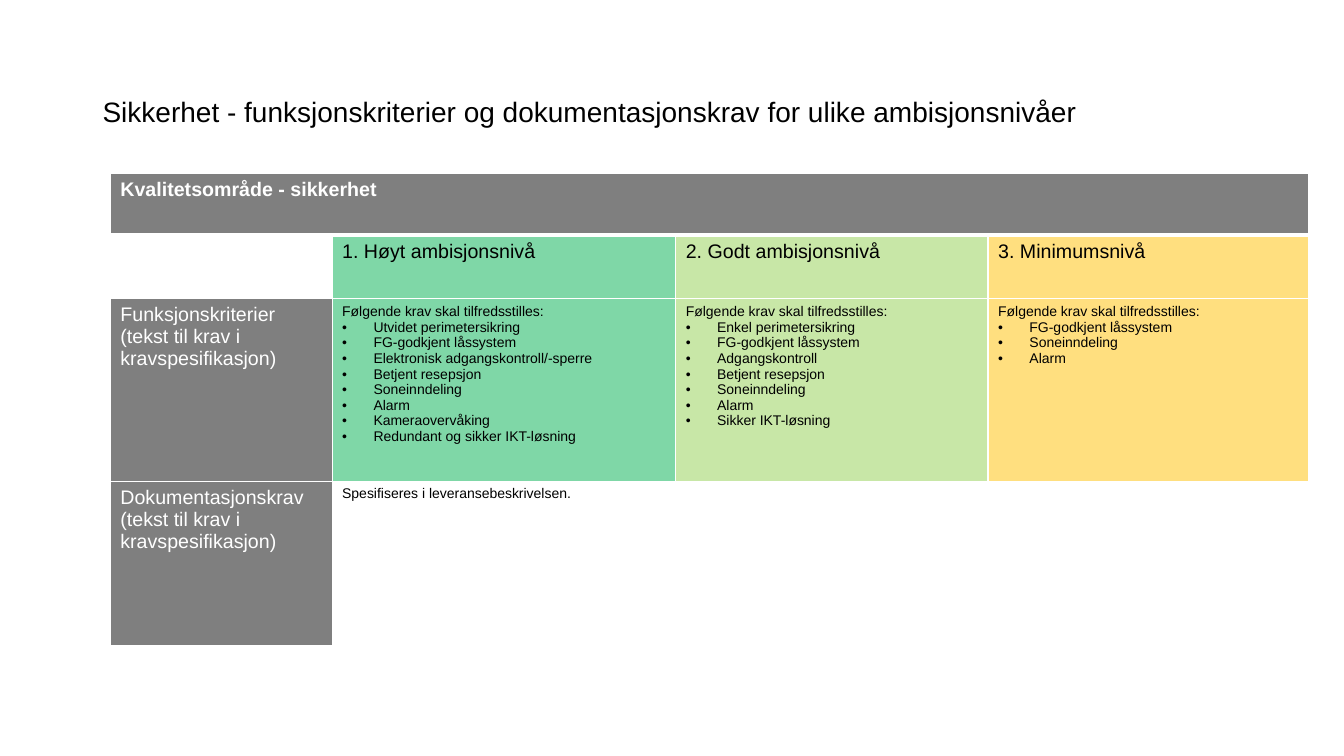
from lxml import etree
from pptx import Presentation
from pptx import util as u
from pptx.dml.color import RGBColor
from pptx.enum import text
from pptx.oxml import ns

BLACK = RGBColor(0x00, 0x00, 0x00)
WHITE = RGBColor(0xFF, 0xFF, 0xFF)
GREEN = RGBColor(0x00, 0xB0, 0x50)
LIME = RGBColor(0x92, 0xD0, 0x50)
AMBER = RGBColor(0xFF, 0xC0, 0x00)

FONT = "Arial"
HEADING_SIZE, BODY_SIZE = 14, 10
COLUMN_WIDTHS = [5.59, 8.66, 7.87, 8.08]
ROW_HEIGHTS = [1.55, 1.6, 4.6, 4.14]
INTRODUCTION = "Følgende krav skal tilfredsstilles:"

# Ambition levels: heading, colour and requirements
LEVELS = [
    ("1. Høyt ambisjonsnivå", GREEN,
     ["Utvidet perimetersikring", "FG-godkjent låssystem",
      "Elektronisk adgangskontroll/-sperre", "Betjent resepsjon",
      "Soneinndeling", "Alarm", "Kameraovervåking",
      "Redundant og sikker IKT-løsning"]),
    ("2. Godt ambisjonsnivå", LIME,
     ["Enkel perimetersikring", "FG-godkjent låssystem", "Adgangskontroll",
      "Betjent resepsjon", "Soneinndeling", "Alarm", "Sikker IKT-løsning"]),
    ("3. Minimumsnivå", AMBER,
     ["FG-godkjent låssystem", "Soneinndeling", "Alarm"]),
]


def add_run(paragraph, words, size, color, bold=False):
    run = paragraph.add_run()
    run.text = words
    run.font.name = FONT
    run.font.size = u.Pt(size)
    run.font.color.rgb = color
    run.font.bold = bold


def add_bullet(paragraph):
    properties = paragraph._p.get_or_add_pPr()
    indent = u.Cm(0.79)
    properties.set("marL", str(indent))
    properties.set("indent", str(-indent))
    etree.SubElement(properties, ns.qn("a:buFont")).set("typeface", FONT)
    etree.SubElement(properties, ns.qn("a:buChar")).set("char", "•")


def write_cell(cell, lines, size=HEADING_SIZE, color=BLACK, bold=False, bullets=()):
    frame = cell.text_frame
    for index, words in enumerate([*lines, *bullets]):
        paragraph = frame.add_paragraph() if index else frame.paragraphs[0]
        if index >= len(lines):
            add_bullet(paragraph)
        add_run(paragraph, words, size, color, bold)


def fill_half(cell, color):
    """Fill a cell with a half transparent colour."""
    cell.fill.solid()
    cell.fill.fore_color.rgb = color
    color_element = cell._tc.tcPr.find(".//" + ns.qn("a:srgbClr"))
    etree.SubElement(color_element, ns.qn("a:alpha")).set("val", "50000")


def set_borders(cell, top=1, bottom=1):
    properties = cell._tc.get_or_add_tcPr()
    sides = [("L", 1), ("R", 1), ("T", top), ("B", bottom)]
    for index, (side, width) in enumerate(sides):
        line = etree.Element(ns.qn("a:ln" + side))
        line.set("w", str(u.Pt(width)))
        fill = etree.SubElement(line, ns.qn("a:solidFill"))
        etree.SubElement(fill, ns.qn("a:srgbClr")).set("val", str(WHITE))
        properties.insert(index, line)


def add_title(slide, left, top, width, height):
    title = slide.shapes.title
    title.left, title.top, title.width, title.height = left, top, width, height
    frame = title.text_frame
    frame.word_wrap = True
    frame.auto_size = text.MSO_AUTO_SIZE.NONE
    frame.vertical_anchor = text.MSO_ANCHOR.MIDDLE
    paragraph = frame.paragraphs[0]
    paragraph.alignment = text.PP_ALIGN.LEFT
    paragraph.line_spacing = 0.9
    add_run(paragraph, "Sikkerhet - funksjonskriterier og dokumentasjonskrav "
                       "for ulike ambisjonsnivåer", 20, BLACK)


def add_criteria_table(slide, left, top, width, height):
    table = slide.shapes.add_table(4, 4, left, top, width, height).table
    table.first_row = table.horz_banding = False
    for column, size in zip(table.columns, COLUMN_WIDTHS):
        column.width = u.Cm(size)
    for row, size in zip(table.rows, ROW_HEIGHTS):
        row.height = u.Cm(size)

    # Heading across the table
    table.cell(0, 0).merge(table.cell(0, 3))
    write_cell(table.cell(0, 0), ["Kvalitetsområde - sikkerhet"], color=WHITE, bold=True)

    # Row labels
    write_cell(table.cell(2, 0), ["Funksjonskriterier",
                                  "(tekst til krav i kravspesifikasjon)"], color=WHITE)
    write_cell(table.cell(3, 0), ["Dokumentasjonskrav (tekst til krav i "
                                  "kravspesifikasjon)"], color=WHITE)
    for row in (0, 2, 3):
        fill_half(table.cell(row, 0), BLACK)
    corner = table.cell(1, 0)
    corner.fill.solid()
    corner.fill.fore_color.rgb = WHITE

    # One column for each ambition level
    for column, (heading, color, requirements) in enumerate(LEVELS, start=1):
        write_cell(table.cell(1, column), [heading])
        write_cell(table.cell(2, column), [INTRODUCTION], BODY_SIZE, bullets=requirements)
        for row in (1, 2):
            fill_half(table.cell(row, column), color)

    # Documentation requirement shared by all levels
    documentation = table.cell(3, 1)
    documentation.merge(table.cell(3, 3))
    write_cell(documentation, ["Spesifiseres i leveransebeskrivelsen."], BODY_SIZE)
    documentation.fill.background()

    # White grid, heavier below the heading
    for index, row in enumerate(table.rows):
        for cell in row.cells:
            set_borders(cell, top=3 if index == 1 else 1, bottom=3 if index == 0 else 1)


def main():
    presentation = Presentation()
    presentation.slide_width = u.Cm(33.87)
    presentation.slide_height = u.Cm(19.05)
    slide = presentation.slides.add_slide(presentation.slide_layouts[5])
    add_title(slide, u.Cm(2.33), u.Cm(1.02), u.Cm(29.21), u.Cm(3.68))
    add_criteria_table(slide, u.Cm(2.78), u.Cm(4.38),
                       u.Cm(sum(COLUMN_WIDTHS)), u.Cm(sum(ROW_HEIGHTS)))
    presentation.save("out.pptx")


if __name__ == "__main__":
    main()
